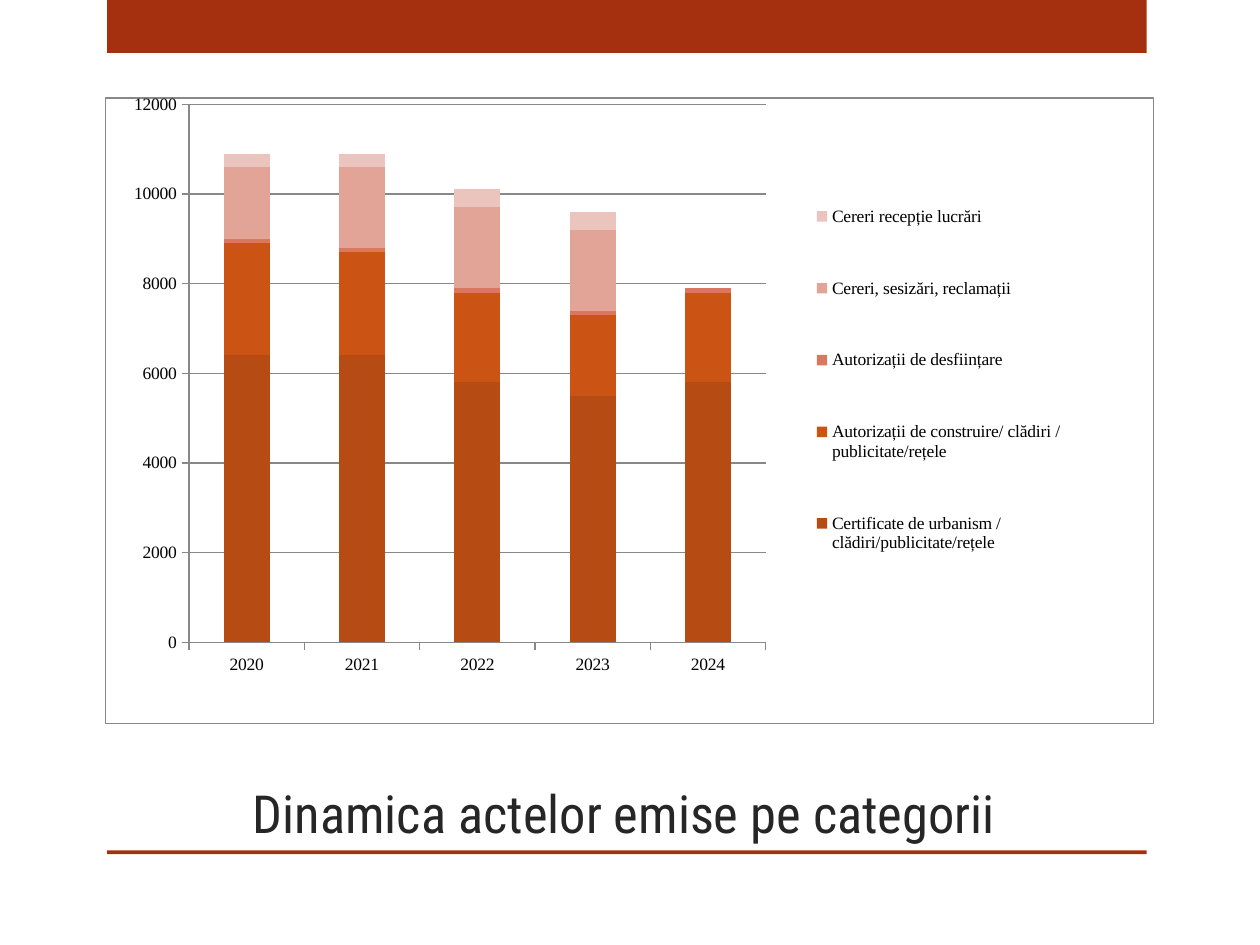
import pptx
import pptx.util
import pptx.dml.color
import pptx.chart.data
import pptx.enum.chart
import pptx.enum.shapes
import pptx.enum.text
import pptx.oxml

Inches = pptx.util.Inches
Pt = pptx.util.Pt
NS = ('xmlns:c="http://schemas.openxmlformats.org/drawingml/2006/chart" '
      'xmlns:a="http://schemas.openxmlformats.org/drawingml/2006/main"')
RED, GRAY = "A5300F", "888888"


def color(text):
    return pptx.dml.color.RGBColor.from_string(text)


def layout(x, y, w, h, target=""):
    """Manual chart layout, as fractions of the chart area."""
    return pptx.oxml.parse_xml(
        f'<c:layout {NS}><c:manualLayout>{target}'
        f'<c:xMode val="edge"/><c:yMode val="edge"/>'
        f'<c:x val="{x}"/><c:y val="{y}"/><c:w val="{w}"/><c:h val="{h}"/>'
        f'</c:manualLayout></c:layout>')


deck = pptx.Presentation()
deck.slide_width, deck.slide_height = Inches(10), Inches(7.5)
slide = deck.slides.add_slide(deck.slide_layouts[5])

# Top band and bottom rule
for top, height in ((0, 0.42), (6.75, 0.03)):
    bar = slide.shapes.add_shape(
        pptx.enum.shapes.MSO_SHAPE.RECTANGLE,
        Inches(0.85), Inches(top), Inches(8.25), Inches(height))
    bar.shadow.inherit = False
    bar.fill.solid()
    bar.fill.fore_color.rgb = color(RED)
    bar.line.fill.background()

# Title
title = slide.shapes.title
title.left, title.top = Inches(0.83), Inches(6)
title.width, title.height = Inches(8.25), Inches(0.75)
frame = title.text_frame
frame.text = "Dinamica actelor emise pe categorii"
frame.vertical_anchor = pptx.enum.text.MSO_ANCHOR.BOTTOM
para = frame.paragraphs[0]
para.alignment = pptx.enum.text.PP_ALIGN.CENTER
font = para.runs[0].font
font.name, font.size = "Roboto Condensed", Pt(30)
font.color.rgb = color("262626")

# Chart data
series = (
    ("Certificate de urbanism /clădiri/publicitate/rețele", "B64B13",
     (6400, 6400, 5800, 5500, 5800)),
    ("Autorizații de construire/ clădiri / publicitate/rețele", "CB5415",
     (2500, 2300, 2000, 1800, 2000)),
    ("Autorizații de desființare", "DA785F", (100, 100, 100, 100, 100)),
    ("Cereri, sesizări, reclamații", "E3A498",
     (1600, 1800, 1800, 1800, None)),
    ("Cereri recepție lucrări", "EBC4BD", (300, 300, 400, 400, None)),
)
data = pptx.chart.data.CategoryChartData()
data.categories = ["2020", "2021", "2022", "2023", "2024"]
for name, tint, vals in series:
    data.add_series(name, vals)

# Stacked column chart
chart = slide.shapes.add_chart(
    pptx.enum.chart.XL_CHART_TYPE.COLUMN_STACKED,
    Inches(0.83), Inches(0.75), Inches(8.33), Inches(5), data).chart
chart.has_title = False
chart.font.name, chart.font.size = "Times New Roman", Pt(10)
chart.font.color.rgb = color("000000")
plot = chart.plots[0]
plot.gap_width, plot.overlap = 150, 100
plot.vary_by_categories = False
for bars, (name, tint, vals) in zip(plot.series, series):
    bars.format.fill.solid()
    bars.format.fill.fore_color.rgb = color(tint)

# Axes and gridlines
scale = chart.value_axis
scale.minimum_scale, scale.maximum_scale = 0, 12000
scale.major_unit = 2000
scale.has_major_gridlines = True
for part in (chart.category_axis, scale, scale.major_gridlines):
    part.format.line.color.rgb = color(GRAY)
    part.format.line.width = Pt(0.75)
for axis in (chart.category_axis, scale):
    axis.major_tick_mark = pptx.enum.chart.XL_TICK_MARK.OUTSIDE

# Legend
chart.has_legend = True
legend = chart.legend
legend.position = pptx.enum.chart.XL_LEGEND_POSITION.RIGHT
legend.include_in_layout = False
legend.font.name, legend.font.size = "Times New Roman", Pt(10)
legend.font.color.rgb = color("000000")

# Placement of plot and legend
root = chart.element
area = root.chart.plotArea
for old in root.xpath("c:chart/c:plotArea/c:layout | c:chart/c:legend/c:layout"):
    old.getparent().remove(old)
area.insert(0, layout(0.08, 0.01, 0.55, 0.86,
                      '<c:layoutTarget val="inner"/>'))
root.xpath("c:chart/c:legend/c:legendPos")[0].addnext(
    layout(0.66, 0.09, 0.27, 0.72))

# Chart border
root.chart.addnext(pptx.oxml.parse_xml(
    f'<c:spPr {NS}><a:noFill/><a:ln w="{Pt(0.75)}"><a:solidFill>'
    f'<a:srgbClr val="{GRAY}"/></a:solidFill></a:ln></c:spPr>'))

deck.save("out.pptx")
